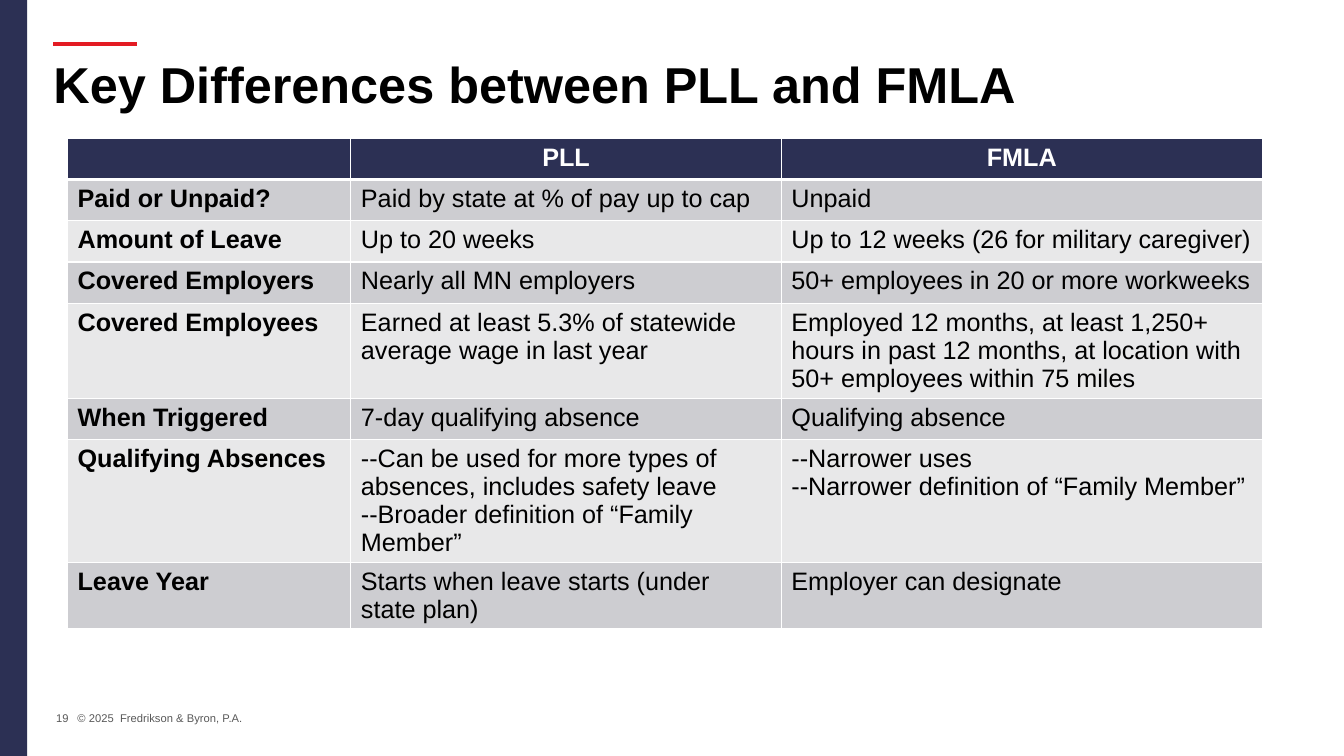
import pptx
import pptx.dml.color
import pptx.enum.shapes
import pptx.enum.text
import pptx.oxml
import pptx.oxml.ns
import pptx.util
from dataclasses import dataclass

Inches = pptx.util.Inches
Pt = pptx.util.Pt
RGB = pptx.dml.color.RGBColor.from_string
ALIGN = pptx.enum.text.PP_ALIGN
ANCHOR = pptx.enum.text.MSO_ANCHOR


@dataclass(frozen=True)
class Theme:
    font: str = "Arial"
    navy: str = "2C3054"
    red: str = "E31B23"
    black: str = "000000"
    white: str = "FFFFFF"
    gray: str = "595959"
    bands: tuple = ("CDCDD1", "E8E8E9")
    title: int = 36
    body: int = 18
    footer: int = 8


theme = Theme()


def add_run(p, text, size, color, bold=False):
    r = p.add_run()
    r.text = text
    r.font.name = theme.font
    r.font.size = Pt(size)
    r.font.bold = bold
    r.font.color.rgb = RGB(color)


def set_borders(cell, bottom_width):
    """Draw white borders on all four sides, before the cell's fill is set."""
    tcPr = cell._tc.get_or_add_tcPr()
    for side, width in (("L", 1), ("R", 1), ("T", 1), ("B", bottom_width)):
        tcPr.append(pptx.oxml.parse_xml(
            f'<a:ln{side} {pptx.oxml.ns.nsdecls("a")} w="{Pt(width)}"><a:solidFill>'
            f'<a:srgbClr val="{theme.white}"/></a:solidFill></a:ln{side}>'))


prs = pptx.Presentation()
prs.slide_width = Inches(13.33)
prs.slide_height = Inches(7.5)
s = prs.slides.add_slide(prs.slide_layouts.get_by_name("Title Only"))

# Side band and accent line
band = s.shapes.add_shape(pptx.enum.shapes.MSO_SHAPE.RECTANGLE,
                          0, 0, Inches(0.27), prs.slide_height)
band.shadow.inherit = False
band.fill.solid()
band.fill.fore_color.rgb = RGB(theme.navy)
band.line.fill.background()

accent = s.shapes.add_connector(pptx.enum.shapes.MSO_CONNECTOR.STRAIGHT,
                                Inches(0.53), Inches(0.44), Inches(1.36), Inches(0.44))
accent.line.color.rgb = RGB(theme.red)
accent.line.width = Pt(3)
accent._element.spPr.append(
    pptx.oxml.parse_xml(f'<a:effectLst {pptx.oxml.ns.nsdecls("a")}/>'))

# Title
title = s.shapes.title
title.left, title.top = Inches(0.53), Inches(0.39)
title.width, title.height = Inches(12.3), Inches(0.8)
tf = title.text_frame
tf.word_wrap = True
tf.auto_size = pptx.enum.text.MSO_AUTO_SIZE.NONE
tf.vertical_anchor = ANCHOR.TOP
tf.margin_left, tf.margin_top = 0, Inches(0.2)
tf.margin_right, tf.margin_bottom = Inches(0.1), Inches(0.05)
p = tf.paragraphs[0]
p.alignment = ALIGN.LEFT
p.line_spacing = 0.9
add_run(p, "Key Differences between PLL and FMLA", theme.title, theme.black, True)

# Comparison table: line count of the tallest cell, then the cells' paragraphs
rows = [
    (1, [], ["PLL"], ["FMLA"]),
    (1, ["Paid or Unpaid?"], ["Paid by state at % of pay up to cap"], ["Unpaid"]),
    (1, ["Amount of Leave"], ["Up to 20 weeks"],
     ["Up to 12 weeks (26 for military caregiver)"]),
    (1, ["Covered Employers"], ["Nearly all MN employers"],
     ["50+ employees in 20 or more workweeks"]),
    (3, ["Covered Employees"],
     ["Earned at least 5.3% of statewide average wage in last year"],
     ["Employed 12 months, at least 1,250+ hours in past 12 months, "
      "at location with 50+ employees within 75 miles"]),
    (1, ["When Triggered"], ["7-day qualifying absence"], ["Qualifying absence"]),
    (4, ["Qualifying Absences"],
     ["--Can be used for more types of absences, includes safety leave",
      "--Broader definition of “Family Member”"],
     ["--Narrower uses", "--Narrower definition of “Family Member”"]),
    (2, ["Leave Year"], ["Starts when leave starts (under state plan)"],
     ["Employer can designate"]),
]
columns = (2.81, 4.27, 4.77)
heights = [max(0.41, 0.1 + 0.28 * lines) for lines, *_ in rows]

table = s.shapes.add_table(len(rows), len(columns), Inches(0.67), Inches(1.37),
                           Inches(sum(columns)), Inches(sum(heights))).table
for column, width in zip(table.columns, columns):
    column.width = Inches(width)

for i, (_, *texts) in enumerate(rows):
    header = i == 0
    table.rows[i].height = Inches(heights[i])
    for j, paragraphs in enumerate(texts):
        cell = table.cell(i, j)
        set_borders(cell, 3 if header else 1)
        cell.fill.solid()
        cell.fill.fore_color.rgb = RGB(theme.navy if header else theme.bands[(i - 1) % 2])
        tf = cell.text_frame
        tf.paragraphs[0].font.size = Pt(theme.body)
        for k, text in enumerate(paragraphs):
            p = tf.add_paragraph() if k else tf.paragraphs[0]
            p.alignment = ALIGN.CENTER if header else ALIGN.LEFT
            add_run(p, text, theme.body, theme.white if header else theme.black,
                    header or j == 0)

# Footer
for text, left, top, width, height, align in (
        ("© 2025  Fredrikson & Byron, P.A.", 0.67, 7, 1.94, 0.25, ALIGN.LEFT),
        ("19", 0.34, 6.98, 0.44, 0.28, ALIGN.RIGHT)):
    tf = s.shapes.add_textbox(Inches(left), Inches(top),
                              Inches(width), Inches(height)).text_frame
    tf.word_wrap = True
    tf.vertical_anchor = ANCHOR.MIDDLE
    p = tf.paragraphs[0]
    p.alignment = align
    add_run(p, text, theme.footer, theme.gray)

prs.save("out.pptx")
